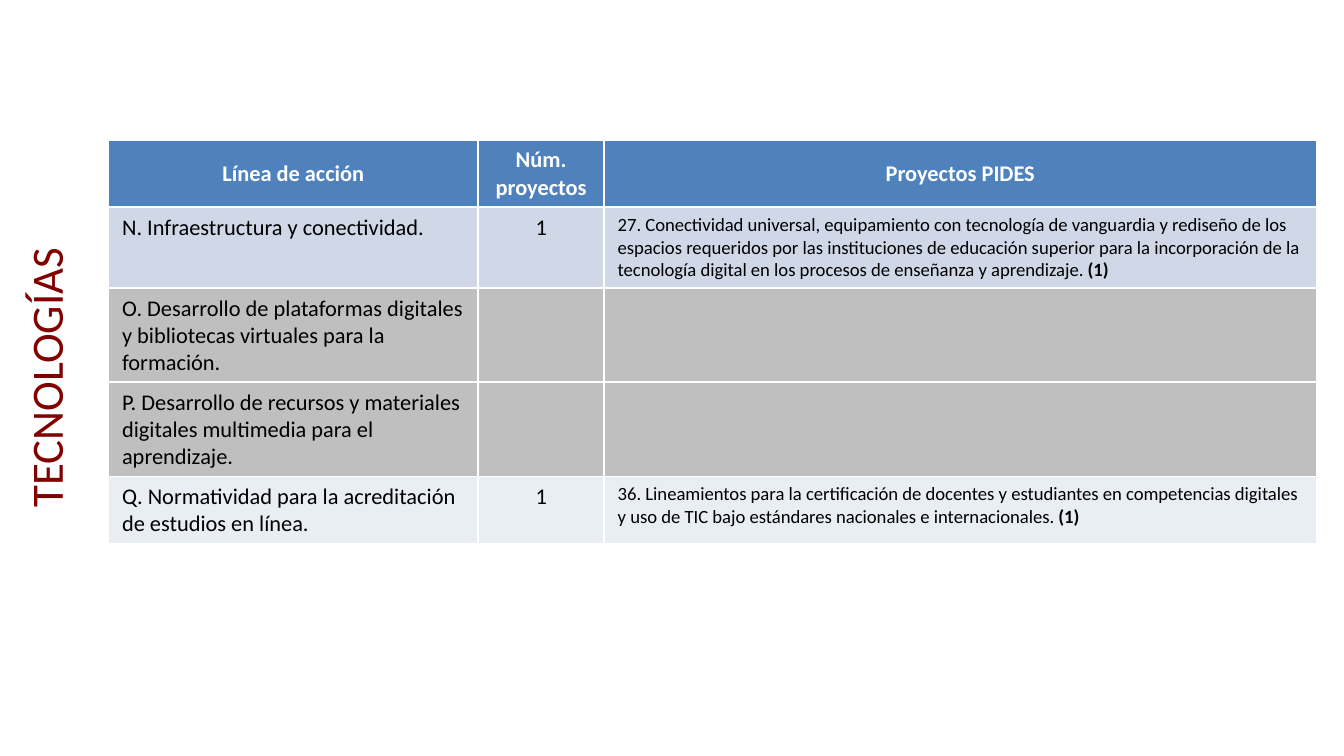
from pptx import Presentation
from pptx.dml.color import RGBColor
from pptx.enum.text import MSO_ANCHOR, PP_ALIGN
from pptx.util import Pt

CENTER, LEFT = PP_ALIGN.CENTER, PP_ALIGN.LEFT
MIDDLE, TOP = MSO_ANCHOR.MIDDLE, MSO_ANCHOR.TOP

FONT = "Calibri"
MAROON = RGBColor(0x80, 0x00, 0x00)
WHITE = RGBColor(0xFF, 0xFF, 0xFF)
BLACK = RGBColor(0x00, 0x00, 0x00)
BLUE = RGBColor(0x4F, 0x81, 0xBD)
LIGHT_BLUE = RGBColor(0xD0, 0xD8, 0xE8)
PALE_BLUE = RGBColor(0xE9, 0xED, 0xF4)
GRAY = RGBColor(0xBF, 0xBF, 0xBF)

TITLE = "TECNOLOGÍAS"
HEADINGS = ["Línea de acción", "Núm. proyectos", "Proyectos PIDES"]
# Line of action, number of projects, project, count shown in bold, fill
ACTION_LINES = [
    ("N. Infraestructura y conectividad.", "1",
     "27. Conectividad universal, equipamiento con tecnología de vanguardia y "
     "rediseño de los espacios requeridos por las instituciones de educación "
     "superior para la incorporación de la tecnología digital en los procesos "
     "de enseñanza y aprendizaje.", " (1)", LIGHT_BLUE),
    ("O. Desarrollo de plataformas digitales y bibliotecas virtuales para la "
     "formación.", "", "", "", GRAY),
    ("P. Desarrollo de recursos y materiales digitales multimedia para el "
     "aprendizaje.", "", "", "", GRAY),
    ("Q. Normatividad para la acreditación de estudios en línea.", "1",
     "36. Lineamientos para la certificación de docentes y estudiantes en "
     "competencias digitales y uso de TIC bajo estándares nacionales e "
     "internacionales.", " (1)", PALE_BLUE),
]
COLUMN_WIDTHS = [198, 67.5, 381.6]
ROW_HEIGHT = 29.5  # minimum; rows grow with their text


def style_run(run, size, color, bold=False):
    run.font.name = FONT
    run.font.size = Pt(size)
    run.font.bold = bold
    run.font.color.rgb = color


def fill_cell(cell, text, fill, size=12, color=BLACK, bold=False,
              align=LEFT, anchor=TOP):
    cell.fill.solid()
    cell.fill.fore_color.rgb = fill
    cell.vertical_anchor = anchor
    paragraph = cell.text_frame.paragraphs[0]
    paragraph.text = text
    paragraph.alignment = align
    paragraph.font.size = Pt(size)
    for run in paragraph.runs:
        style_run(run, size, color, bold)
    return paragraph


def add_title(slide):
    title = slide.shapes.add_textbox(Pt(-178.6), Pt(168.5), Pt(405.4), Pt(67.7))
    title.rotation = 270
    frame = title.text_frame
    frame.word_wrap = True
    frame.vertical_anchor = MIDDLE
    paragraph = frame.paragraphs[0]
    paragraph.text = TITLE
    paragraph.alignment = CENTER
    style_run(paragraph.runs[0], 24, MAROON)


def add_projects_table(slide):
    row_count = len(ACTION_LINES) + 1
    table = slide.shapes.add_table(
        row_count, len(HEADINGS), Pt(58.2), Pt(75),
        Pt(sum(COLUMN_WIDTHS)), Pt(row_count * ROW_HEIGHT)).table
    for column, width in zip(table.columns, COLUMN_WIDTHS):
        column.width = Pt(width)

    for col, heading in enumerate(HEADINGS):
        fill_cell(table.cell(0, col), heading, BLUE, color=WHITE, bold=True,
                  align=CENTER, anchor=MIDDLE)

    for row, (action, number, project, count, fill) in enumerate(ACTION_LINES, 1):
        fill_cell(table.cell(row, 0), action, fill)
        fill_cell(table.cell(row, 1), number, fill, align=CENTER)
        paragraph = fill_cell(table.cell(row, 2), project, fill, size=10)
        if count:
            paragraph.space_before = paragraph.space_after = Pt(3)
            count_run = paragraph.add_run()
            count_run.text = count
            style_run(count_run, 10, BLACK, bold=True)


def main():
    presentation = Presentation()
    presentation.slide_width = Pt(720)
    presentation.slide_height = Pt(405)
    slide = presentation.slides.add_slide(presentation.slide_layouts[6])
    add_title(slide)
    add_projects_table(slide)
    presentation.save("out.pptx")


if __name__ == "__main__":
    main()
